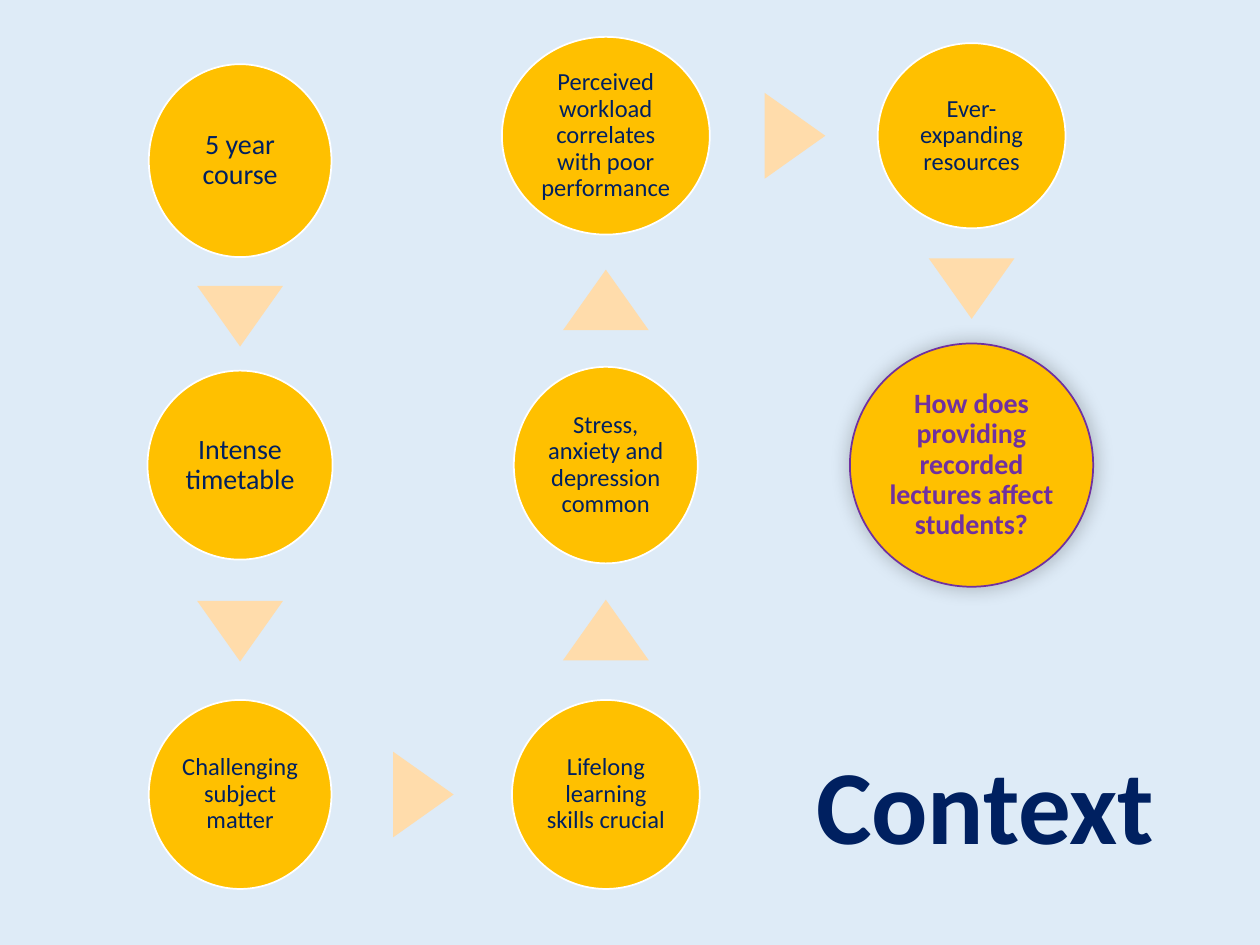
from lxml.etree import SubElement
from pptx import Presentation
from pptx.dml.color import RGBColor
from pptx.enum.shapes import MSO_SHAPE
from pptx.enum.text import MSO_ANCHOR, PP_ALIGN
from pptx.oxml.ns import qn
from pptx.util import Pt

FONT = "Calibri"
NAVY, PURPLE, GOLD, PEACH = "002060", "7030A0", "FFC000", "FFDCAB"
COLUMNS = [137.2, 346.2, 555.2]
MIDDLE, BOTTOM = 265.8, 454

# column, centre y, width, height, font size, text
STEPS = [
    (0, 91.8, 104.4, 110.2, 16, "5 year course"),
    (0, MIDDLE, 105.8, 108, 16, "Intense timetable"),
    (0, BOTTOM, 104.4, 108, 14, "Challenging subject matter"),
    (1, BOTTOM, 107.3, 108, 14, "Lifelong learning skills crucial"),
    (1, MIDDLE, 105.1, 112.3, 14, "Stress, anxiety and depression common"),
    (1, 77.6, 118.8, 113, 14, "Perceived workload correlates with poor performance"),
    (2, 77.6, 107.3, 105.8, 14, "Ever-expanding resources"),
]

# centre x, centre y, rotation
ARROWS = [
    (COLUMNS[0], 180.7, 180),
    (COLUMNS[0], 360.7, 180),
    (241.9, BOTTOM, 90),
    (COLUMNS[1], 360, 0),
    (COLUMNS[1], 171.4, 0),
    (454.3, 77.6, 90),
    (COLUMNS[2], 164.9, 180),
]


def rgb(color):
    return RGBColor.from_string(color)


def write(tf, text, size, color, align, bold=False):
    tf.word_wrap = True
    tf.vertical_anchor = MSO_ANCHOR.MIDDLE
    p = tf.paragraphs[0]
    p.text = text
    p.alignment = align
    p.line_spacing = 0.9
    p.font.name = FONT
    p.font.size = Pt(size)
    p.font.bold = bold
    p.font.color.rgb = rgb(color)


def add_centred(s, kind, x, y, width, height, fill):
    """Add a preset shape whose centre is at x, y."""
    sp = s.shapes.add_shape(kind, Pt(x - width / 2), Pt(y - height / 2),
                            Pt(width), Pt(height))
    sp.shadow.inherit = False
    sp.fill.solid()
    sp.fill.fore_color.rgb = rgb(fill)
    return sp


def add_circle(s, column, y, width, height, size, text,
               color=NAVY, line="FFFFFF", bold=False):
    sp = add_centred(s, MSO_SHAPE.OVAL, COLUMNS[column], y, width, height, GOLD)
    sp.line.color.rgb = rgb(line)
    sp.line.width = Pt(1)
    tf = sp.text_frame
    tf.margin_left = tf.margin_right = tf.margin_top = tf.margin_bottom = Pt(1.5)
    write(tf, text, size, color, PP_ALIGN.CENTER, bold)
    return sp


def add_arrow(s, x, y, rotation):
    sp = add_centred(s, MSO_SHAPE.ISOSCELES_TRIANGLE, x, y, 49, 34.6, PEACH)
    sp.line.fill.background()
    sp.rotation = rotation


def add_halo(sp):
    """Give the shape a soft shadow on all sides."""
    effects = sp.element.spPr.find(qn("a:effectLst"))
    shadow = SubElement(effects, qn("a:outerShdw"), blurRad=str(Pt(10)),
                        sx="102000", sy="102000", algn="ctr", rotWithShape="0")
    black = SubElement(shadow, qn("a:srgbClr"), val="000000")
    SubElement(black, qn("a:alpha"), val="20000")


def add_title(s, text):
    box = s.shapes.add_textbox(Pt(154), Pt(411), Pt(512.7), Pt(104.4))
    write(box.text_frame, text, 60, NAVY, PP_ALIGN.RIGHT, bold=True)


def main():
    prs = Presentation()
    prs.slide_width, prs.slide_height = Pt(720), Pt(540)
    s = prs.slides.add_slide(prs.slide_layouts[6])
    s.background.fill.solid()
    s.background.fill.fore_color.rgb = rgb("DEEBF7")

    for step in STEPS:
        add_circle(s, *step)
    for arrow in ARROWS:
        add_arrow(s, *arrow)
    question = add_circle(s, 2, MIDDLE, 139, 139, 16,
                          "How does providing recorded lectures affect students?",
                          PURPLE, PURPLE, bold=True)
    add_halo(question)
    add_title(s, "Context")
    prs.save("out.pptx")


if __name__ == "__main__":
    main()
